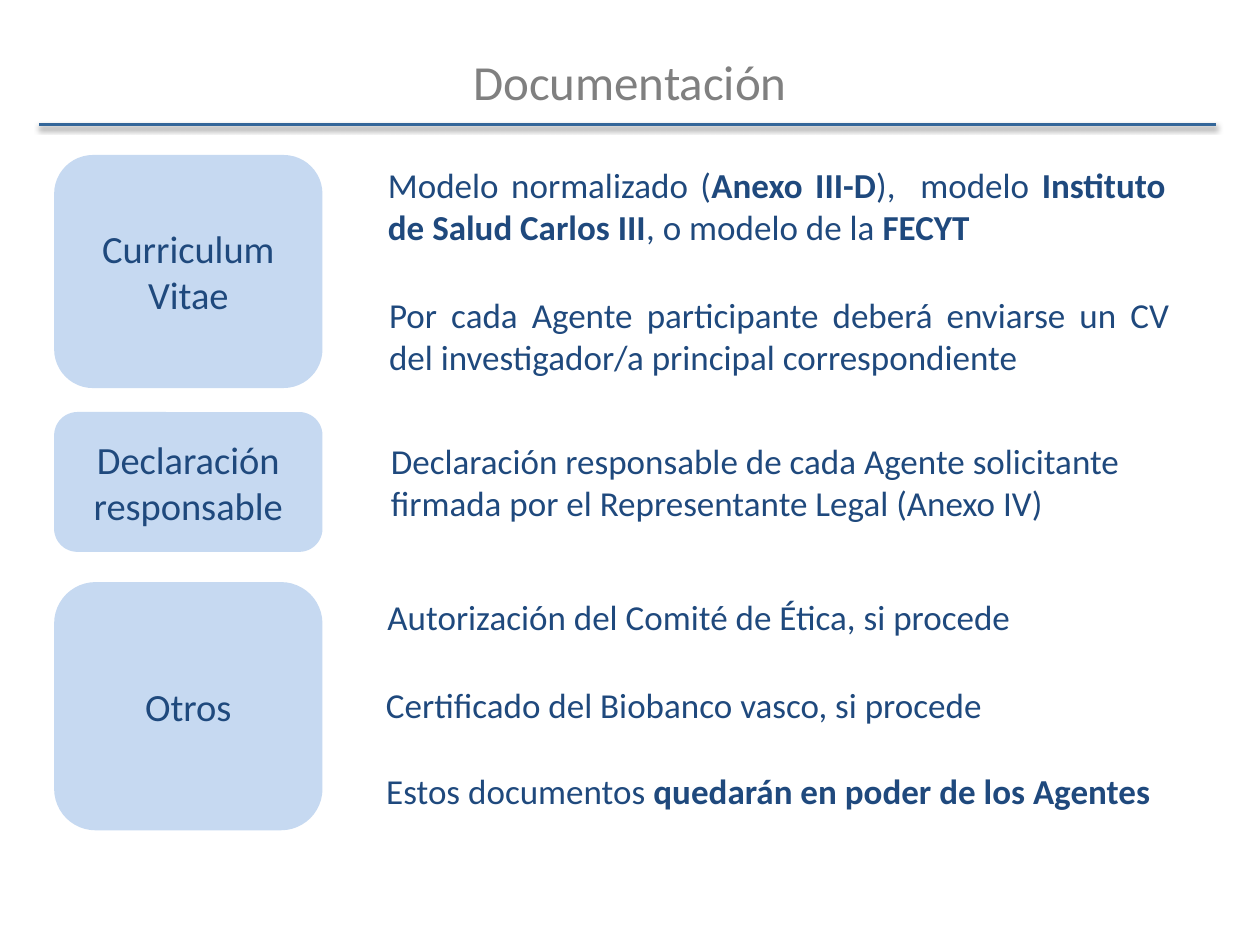
from lxml import etree
from pptx import Presentation
from pptx.dml.color import RGBColor
from pptx.enum.shapes import MSO_CONNECTOR, MSO_SHAPE
from pptx.enum.text import MSO_ANCHOR, PP_ALIGN
from pptx.oxml.ns import qn
from pptx.util import Inches, Pt

CENTER, LEFT, JUSTIFY = PP_ALIGN.CENTER, PP_ALIGN.LEFT, PP_ALIGN.JUSTIFY
FONT = "Calibri"
NAVY = RGBColor(0x1F, 0x49, 0x7D)
PALE_BLUE = RGBColor(0xC6, 0xD9, 0xF1)
RULE_BLUE = RGBColor(0x33, 0x66, 0x99)
GRAY = RGBColor(0x80, 0x80, 0x80)
WHITE = RGBColor(0xFF, 0xFF, 0xFF)

TITLE = "Documentación"
LABEL_LEFT, LABEL_WIDTH = 0.43, 2.13

# Each section: label, top, height, details
# Each detail: left, top, width, height, alignment, runs of (text, bold)
SECTIONS = [
    ("Curriculum Vitae", 1.23, 1.85, [
        (2.94, 1.22, 6.45, 0.83, JUSTIFY, [
            ("Modelo normalizado (", False), ("Anexo III-D", True),
            ("),  modelo ", False), ("Instituto de Salud Carlos III", True),
            (", o modelo de la ", False), ("FECYT", True)]),
        (2.95, 2.25, 6.47, 0.82, JUSTIFY, [
            ("Por cada Agente participante deberá enviarse un CV del "
             "investigador/a principal correspondiente", False)]),
    ]),
    ("Declaración responsable", 3.27, 1.11, [
        (2.95, 3.27, 6.47, 1.11, LEFT, [
            ("Declaración responsable de cada Agente solicitante firmada "
             "por el Representante Legal (Anexo IV)", False)]),
    ]),
    ("Otros", 4.62, 1.97, [
        (2.95, 4.62, 6.4, 0.55, LEFT, [
            ("Autorización del Comité de Ética, si procede", False)]),
        (2.94, 5.34, 6.4, 0.51, LEFT, [
            ("Certificado del Biobanco vasco, si procede", False)]),
        (2.94, 6, 6.4, 0.55, LEFT, [
            ("Estos documentos ", False),
            ("quedarán en poder de los Agentes", True)]),
    ]),
]


def write_text(shape, runs, size, color, align):
    frame = shape.text_frame
    frame.word_wrap = True
    frame.vertical_anchor = MSO_ANCHOR.MIDDLE
    para = frame.paragraphs[0]
    para.alignment = align
    for text, bold in runs:
        span = para.add_run()
        span.text = text
        span.font.name = FONT
        span.font.size = Pt(size)
        span.font.bold = bold
        span.font.color.rgb = color


def add_box(page, place, fill, runs, size, align):
    box = page.shapes.add_shape(MSO_SHAPE.ROUNDED_RECTANGLE, *map(Inches, place))
    box.shadow.inherit = False
    box.fill.solid()
    box.fill.fore_color.rgb = fill
    box.line.fill.background()
    write_text(box, runs, size, NAVY, align)


def add_title_rule(page):
    rule = page.shapes.add_connector(
        MSO_CONNECTOR.STRAIGHT, Inches(0.31), Inches(0.99), Inches(9.65), Inches(0.99))
    rule.line.color.rgb = RULE_BLUE
    rule.line.width = Pt(2)
    # Soft shadow below the rule
    effects = etree.SubElement(rule._element.spPr, qn("a:effectLst"))
    shadow = etree.SubElement(
        effects, qn("a:outerShdw"), blurRad=str(Pt(3.1)), dist=str(Pt(1.6)),
        dir="5400000", rotWithShape="0")
    black = etree.SubElement(shadow, qn("a:srgbClr"), val="000000")
    etree.SubElement(black, qn("a:alpha"), val="38000")


def main():
    deck = Presentation()
    deck.slide_width, deck.slide_height = Inches(10), Inches(7.5)
    page = deck.slides.add_slide(deck.slide_layouts[6])

    add_title_rule(page)

    # Labels on the left, details on the right
    for label, top, height, details in SECTIONS:
        add_box(page, (LABEL_LEFT, top, LABEL_WIDTH, height), PALE_BLUE,
                [(label, False)], 22, CENTER)
        for *place, align, runs in details:
            add_box(page, place, WHITE, runs, 20, align)

    # Title
    title = page.shapes.add_textbox(Inches(0.5), Inches(0.3), Inches(9), Inches(0.69))
    write_text(title, [(TITLE, False)], 28, GRAY, CENTER)

    deck.save("out.pptx")


if __name__ == "__main__":
    main()
